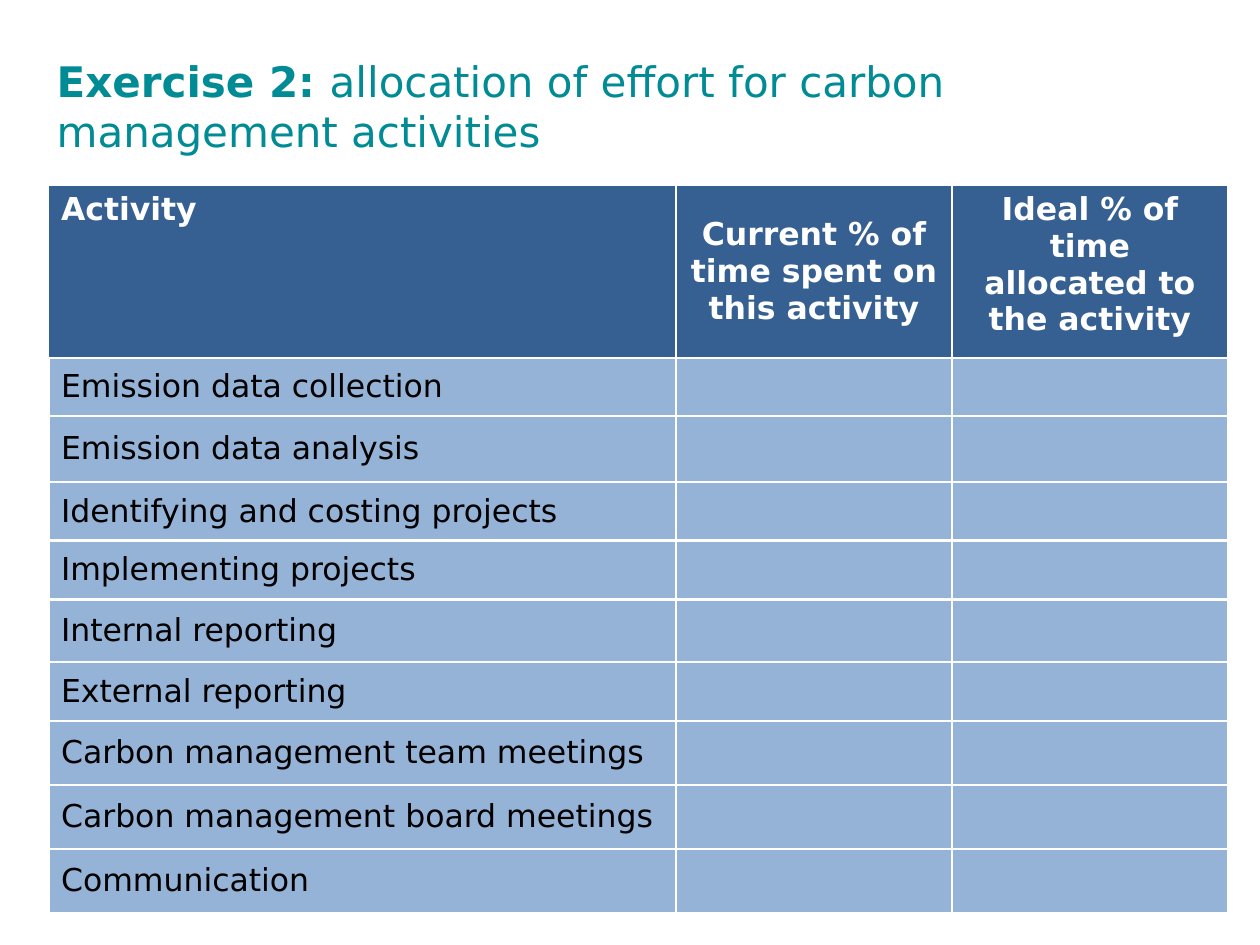
import pptx
import pptx.dml.color
import pptx.enum.text
import pptx.oxml
import pptx.oxml.ns
import pptx.util

Pt = pptx.util.Pt
RGB = pptx.dml.color.RGBColor
Align = pptx.enum.text.PP_ALIGN
Anchor = pptx.enum.text.MSO_ANCHOR

TEAL = RGB(0x00, 0x8B, 0x95)
NAVY = RGB(0x36, 0x60, 0x92)
BLUE = RGB(0x95, 0xB3, 0xD7)
WHITE = RGB(0xFF, 0xFF, 0xFF)
BLACK = RGB(0x00, 0x00, 0x00)

HEADS = [
    ("Activity", Align.LEFT, Anchor.TOP),
    ("Current % of time spent on this activity", Align.CENTER, Anchor.MIDDLE),
    ("Ideal % of time allocated to the activity", Align.CENTER, Anchor.TOP),
]
TASKS = [
    ("Emission data collection", 33.5),
    ("Emission data analysis", 37.4),
    ("Identifying and costing projects", 33.7),
    ("Implementing projects", 33.7),
    ("Internal reporting", 35.6),
    ("External reporting", 33.7),
    ("Carbon management team meetings", 36.7),
    ("Carbon management board meetings", 36.7),
    ("Communication", 36.4),
]
WIDTHS = [358.6, 157.7, 157.7]
HEAD_TALL = 98.4


class Slide:
    face = "DejaVu Sans"

    def __init__(self, deck):
        self.page = deck.slides.add_slide(deck.slide_layouts[5])

    def style(self, font, size, color, bold=False):
        font.name = self.face
        font.size = Pt(size)
        font.bold = bold
        font.color.rgb = color

    def title(self, lead, rest, left, top, wide, tall):
        shape = self.page.shapes.title
        shape.left, shape.top, shape.width, shape.height = map(Pt, (left, top, wide, tall))
        frame = shape.text_frame
        frame.word_wrap = True
        frame.auto_size = pptx.enum.text.MSO_AUTO_SIZE.NONE
        frame.vertical_anchor = Anchor.TOP
        para = frame.paragraphs[0]
        para.alignment = Align.LEFT
        for text, bold in ((lead, True), (rest, False)):
            run = para.add_run()
            run.text = text
            self.style(run.font, 24, TEAL, bold)

    def border(self, cell, width):
        """Draw white lines on all four sides of the cell."""
        props = cell._tc.get_or_add_tcPr()
        space = pptx.oxml.ns.nsdecls("a")
        for spot, side in enumerate(("lnL", "lnR", "lnT", "lnB")):
            line = pptx.oxml.parse_xml(
                f'<a:{side} {space} w="{Pt(width)}"><a:solidFill>'
                f'<a:srgbClr val="{WHITE}"/></a:solidFill></a:{side}>')
            props.insert(spot, line)

    def cell(self, cell, text, fill, color, bold=False,
             align=Align.LEFT, anchor=Anchor.MIDDLE, line=1.5):
        cell.text = text
        cell.vertical_anchor = anchor
        cell.fill.solid()
        cell.fill.fore_color.rgb = fill
        para = cell.text_frame.paragraphs[0]
        para.alignment = align
        self.style(para.font, 18, color, bold)
        self.border(cell, line)

    def table(self, left, top):
        talls = [HEAD_TALL] + [tall for _, tall in TASKS]
        frame = self.page.shapes.add_table(
            len(talls), len(WIDTHS), Pt(left), Pt(top), Pt(sum(WIDTHS)), Pt(sum(talls)))
        grid = frame.table
        for col, wide in zip(grid.columns, WIDTHS):
            col.width = Pt(wide)
        for row, tall in zip(grid.rows, talls):
            row.height = Pt(tall)
        for col, (text, align, anchor) in enumerate(HEADS):
            self.cell(grid.cell(0, col), text, NAVY, WHITE, True, align, anchor, 1)
        for row, (task, _) in enumerate(TASKS, 1):
            for col, text in enumerate((task, "", "")):
                self.cell(grid.cell(row, col), text, BLUE, BLACK)


def main():
    deck = pptx.Presentation()
    deck.slide_width, deck.slide_height = Pt(720), Pt(540)
    slide = Slide(deck)
    slide.title("Exercise 2: ", "allocation of effort for carbon management activities",
                25.2, 28, 676.8, 46)
    slide.table(27.7, 106)
    deck.save("out.pptx")


if __name__ == "__main__":
    main()
